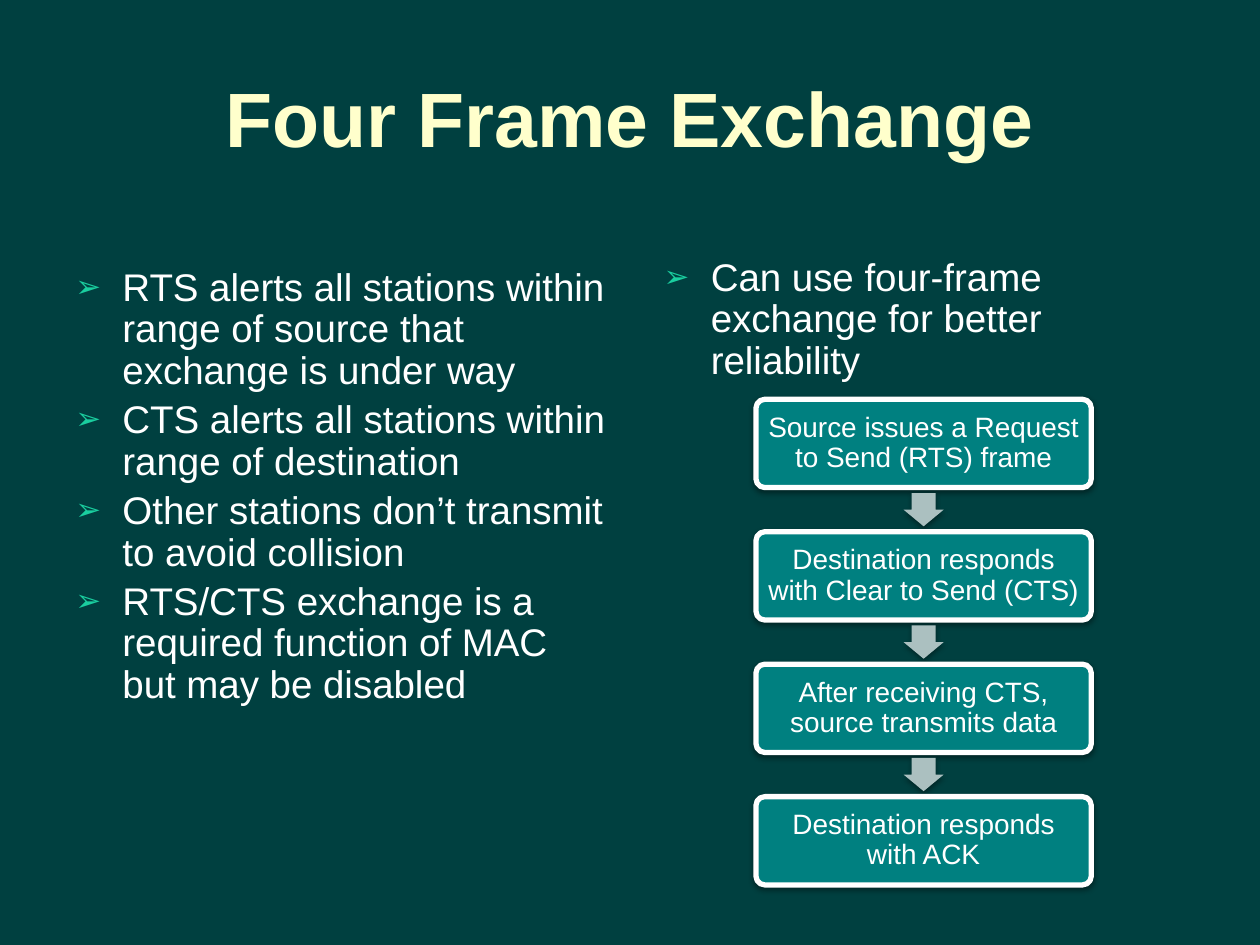
from dataclasses import dataclass

from lxml import etree
from pptx import Presentation
from pptx import util as u
from pptx.dml.color import RGBColor
from pptx.enum import shapes, text
from pptx.oxml import ns


@dataclass(frozen=True)
class Theme:
    font: str = "Arial"
    background: str = "004040"
    title: str = "FFFFCC"
    body: str = "FFFFFF"
    bullet: str = "1ACE9F"
    box: str = "008080"
    arrow: str = "ABC0C0"
    shadow: str = "000000"
    title_size: int = 44
    body_size: int = 22
    box_size: int = 16
    line_spacing: float = 0.9


class SlideBuilder:
    def __init__(self, s, theme):
        self.s = s
        self.theme = theme
        fill = s.background.fill
        fill.solid()
        fill.fore_color.rgb = RGBColor.from_string(theme.background)

    def _format(self, p, size, color, bold=False):
        for r in p.runs:
            r.font.name = self.theme.font
            r.font.size = u.Pt(size)
            r.font.bold = bold
            r.font.color.rgb = RGBColor.from_string(color)

    def _add_bullet(self, p):
        """Give the paragraph a hanging indent and an arrowhead bullet."""
        pPr = p._p.get_or_add_pPr()
        indent = u.Cm(0.95)
        pPr.set("marL", str(indent))
        pPr.set("indent", str(-indent))
        color = etree.SubElement(pPr, ns.qn("a:buClr"))
        etree.SubElement(color, ns.qn("a:srgbClr"), val=self.theme.bullet)
        etree.SubElement(pPr, ns.qn("a:buSzPct"), val="80000")
        etree.SubElement(pPr, ns.qn("a:buFont"), typeface=self.theme.font)
        etree.SubElement(pPr, ns.qn("a:buChar"), char="➢")

    def _add_shadow(self, sp):
        """Put a soft shadow just below the shape."""
        sp.shadow.inherit = False
        effects = sp._element.spPr.find(ns.qn("a:effectLst"))
        shadow = etree.SubElement(
            effects, ns.qn("a:outerShdw"), blurRad=str(u.Pt(3.1)),
            dist=str(u.Pt(1.6)), dir="5400000", rotWithShape="0")
        color = etree.SubElement(shadow, ns.qn("a:srgbClr"), val=self.theme.shadow)
        etree.SubElement(color, ns.qn("a:alpha"), val="38000")

    def _shape(self, kind, left, top, width, height, color):
        sp = self.s.shapes.add_shape(
            kind, u.Cm(left), u.Cm(top), u.Cm(width), u.Cm(height))
        sp.fill.solid()
        sp.fill.fore_color.rgb = RGBColor.from_string(color)
        sp.line.fill.background()
        self._add_shadow(sp)
        return sp

    def title(self, words, left, top, width, height):
        sp = self.s.shapes.title
        sp.left, sp.top = u.Cm(left), u.Cm(top)
        sp.width, sp.height = u.Cm(width), u.Cm(height)
        tf = sp.text_frame
        tf.text = words
        tf.vertical_anchor = text.MSO_ANCHOR.MIDDLE
        p = tf.paragraphs[0]
        p.alignment = text.PP_ALIGN.CENTER
        self._format(p, self.theme.title_size, self.theme.title, bold=True)

    def bullets(self, items, left, top, width, height):
        sp = self.s.shapes.add_textbox(
            u.Cm(left), u.Cm(top), u.Cm(width), u.Cm(height))
        tf = sp.text_frame
        tf.word_wrap = True
        tf.text = "\n".join(items)
        for p in tf.paragraphs:
            p.line_spacing = self.theme.line_spacing
            p.space_before = u.Pt(0.2 * self.theme.body_size)
            self._add_bullet(p)
            self._format(p, self.theme.body_size, self.theme.body)

    def box(self, words, left, top, width, height):
        sp = self._shape(shapes.MSO_SHAPE.ROUNDED_RECTANGLE,
                         left, top, width, height, self.theme.box)
        sp.adjustments[0] = 0.1
        sp.line.color.rgb = RGBColor.from_string(self.theme.body)
        sp.line.width = u.Pt(3)
        tf = sp.text_frame
        tf.word_wrap = True
        tf.vertical_anchor = text.MSO_ANCHOR.MIDDLE
        tf.margin_left = tf.margin_right = u.Cm(0.17)
        tf.margin_top = tf.margin_bottom = u.Cm(0.17)
        tf.text = words
        p = tf.paragraphs[0]
        p.alignment = text.PP_ALIGN.CENTER
        p.line_spacing = self.theme.line_spacing
        self._format(p, self.theme.box_size, self.theme.body)

    def arrow(self, center_x, center_y, width=0.81, height=0.67):
        sp = self._shape(shapes.MSO_SHAPE.DOWN_ARROW, center_x - width / 2,
                         center_y - height / 2, width, height, self.theme.arrow)
        sp.adjustments[0] = 0.6
        sp.adjustments[1] = 0.5

    def flow(self, steps, left, top, width, height, gap):
        """Stack the steps downwards with an arrow in each gap."""
        for i, step in enumerate(steps):
            y = top + i * (height + gap)
            if i:
                self.arrow(left + width / 2, y - gap / 2)
            self.box(step, left, y, width, height)


def main():
    prs = Presentation()
    prs.slide_width, prs.slide_height = u.Cm(25.4), u.Cm(19.05)
    s = prs.slides.add_slide(prs.slide_layouts.get_by_name("Title Only"))
    b = SlideBuilder(s, Theme())
    b.title("Four Frame Exchange", 1.27, 0.76, 22.86, 3.18)
    b.bullets([
        "RTS alerts all stations within range of source that exchange is under way",
        "CTS alerts all stations within range of destination",
        "Other stations don’t transmit to avoid collision",
        "RTS/CTS exchange is a required function of MAC but may be disabled",
    ], 1.27, 5.28, 11.23, 12.37)
    b.bullets(["Can use four-frame exchange for better reliability"],
              13.13, 5.08, 10.9, 2.9)
    b.flow([
        "Source issues a Request to Send (RTS) frame",
        "Destination responds with Clear to Send (CTS)",
        "After receiving CTS, source transmits data",
        "Destination responds with ACK",
    ], left=15.24, top=8.05, width=6.76, height=1.78, gap=0.89)
    prs.save("out.pptx")


if __name__ == "__main__":
    main()
